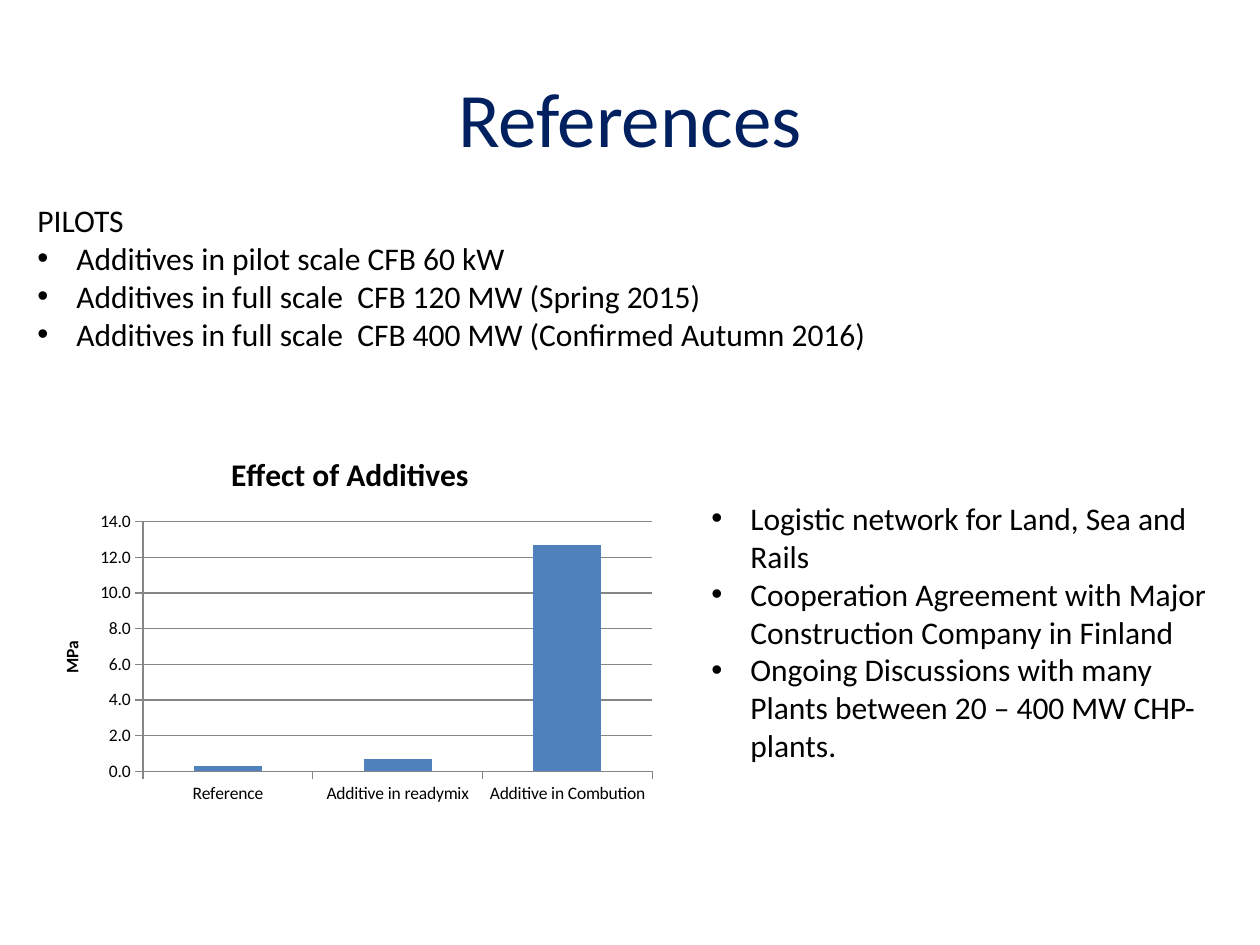
import pptx
import pptx.chart.data
import pptx.dml.color
import pptx.enum.chart
import pptx.enum.text
import pptx.oxml.ns
import pptx.util

Color = pptx.dml.color.RGBColor
NAVY = Color(0x00, 0x20, 0x60)
BLACK = Color(0x00, 0x00, 0x00)
BLUE = Color(0x4F, 0x81, 0xBD)
GRAY = Color(0x86, 0x86, 0x86)

Chart = pptx.enum.chart
Text = pptx.enum.text


def px(num):
    return round(num * 914400 / 126)


def apply(item, form):
    for key, val in form.items():
        setattr(item, key, val)


class Deck:
    face = "Calibri"
    indent = 39

    def __init__(self, wide, high):
        self.prs = pptx.Presentation()
        apply(self.prs, {"slide_width": px(wide), "slide_height": px(high)})
        self.slide = self.prs.slides.add_slide(self.prs.slide_layouts[6])

    def style(self, font, size, color=BLACK, bold=False):
        apply(font, {"name": self.face, "size": pptx.util.Pt(size), "bold": bold})
        font.color.rgb = color

    def bullet(self, para):
        props = para._p.get_or_add_pPr()
        props.set("marL", str(px(self.indent)))
        props.set("indent", str(-px(self.indent)))
        font = props.makeelement(pptx.oxml.ns.qn("a:buFont"), {"typeface": "Arial"})
        mark = props.makeelement(pptx.oxml.ns.qn("a:buChar"), {"char": "•"})
        props.extend([font, mark])

    def text(self, area, lines, size=18, color=BLACK, head=None, form=None,
             align=Text.PP_ALIGN.LEFT, marks=True):
        frame = self.slide.shapes.add_textbox(*map(px, area)).text_frame
        apply(frame, {"word_wrap": True, **(form or {})})
        rows = [(head, False)] if head else []
        rows += [(line, marks) for line in lines]
        for num, (line, mark) in enumerate(rows):
            para = frame.add_paragraph() if num else frame.paragraphs[0]
            if mark:
                self.bullet(para)
            para.alignment = align
            run = para.add_run()
            run.text = line
            self.style(run.font, size, color)

    def label(self, owner, words, size):
        frame = owner.text_frame
        frame.text = words
        self.style(frame.paragraphs[0].runs[0].font, size, bold=True)

    def columns(self, area, title, unit, names, vals):
        data = pptx.chart.data.CategoryChartData(number_format="0.0")
        data.categories = names
        data.add_series(title, vals)
        kind = Chart.XL_CHART_TYPE.COLUMN_CLUSTERED
        chart = self.slide.shapes.add_chart(kind, *map(px, area), data).chart
        apply(chart, {"has_legend": False, "has_title": True})
        self.style(chart.font, 10)
        self.label(chart.chart_title, title, 18)
        chart.chart_title.include_in_layout = False

        # Bars
        plot = chart.plots[0]
        apply(plot, {"gap_width": 150, "vary_by_categories": False})
        fill = plot.series[0].format.fill
        fill.solid()
        fill.fore_color.rgb = BLUE

        # Axes
        cat, val = chart.category_axis, chart.value_axis
        apply(cat, {"has_major_gridlines": False})
        apply(val, {"has_major_gridlines": True, "minimum_scale": 0,
                    "maximum_scale": 14, "major_unit": 2})
        apply(val.tick_labels, {"number_format": "0.0",
                                "number_format_is_linked": False})
        self.label(val.axis_title, unit, 10)
        for axis in (cat, val):
            axis.major_tick_mark = Chart.XL_TICK_MARK.OUTSIDE
        for part in (cat, val, val.major_gridlines):
            part.format.line.color.rgb = GRAY
            part.format.line.width = pptx.util.Pt(0.75)


def main():
    deck = Deck(1260, 945)

    # Title
    deck.text((63, 38, 1134, 157), ["References"], 44, NAVY, marks=False,
              align=Text.PP_ALIGN.CENTER,
              form={"vertical_anchor": Text.MSO_ANCHOR.MIDDLE})

    # Pilot runs
    deck.text((25, 195, 857, 165), [
        "Additives in pilot scale CFB 60 kW",
        "Additives in full scale  CFB 120 MW (Spring 2015)",
        "Additives in full scale  CFB 400 MW (Confirmed Autumn 2016)",
    ], head="PILOTS", form={"word_wrap": False})

    # Strength chart
    deck.columns((35, 433, 630, 378), "Effect of Additives", "MPa",
                 ["Reference", "Additive in readymix", "Additive in Combution"],
                 [0.3, 0.7, 12.7])

    # Partners and plans
    deck.text((699, 493, 541, 317), [
        "Logistic network for Land, Sea and Rails",
        "Cooperation Agreement with Major Construction Company in Finland",
        "Ongoing Discussions with many Plants between 20 – 400 MW CHP-plants.",
    ])

    deck.prs.save("out.pptx")


if __name__ == "__main__":
    main()
